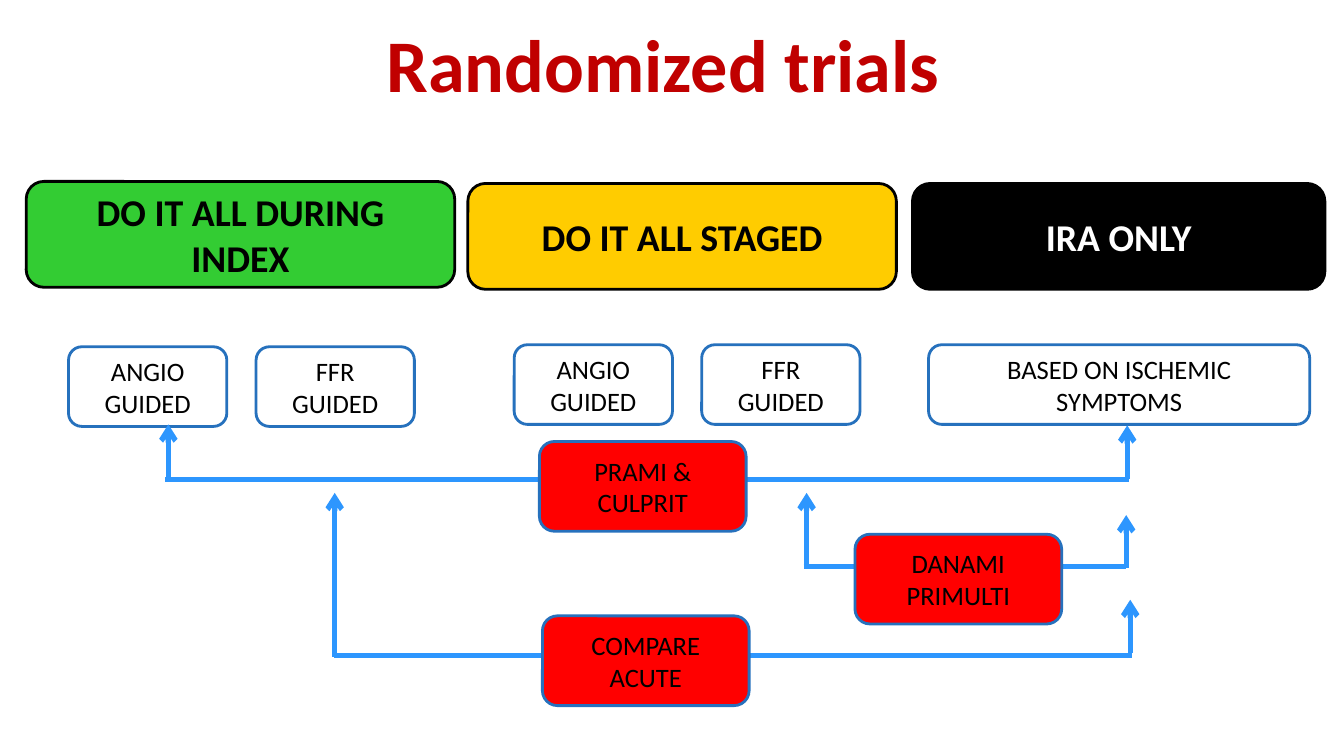
from lxml import etree
from pptx import Presentation
from pptx.dml.color import RGBColor
from pptx.enum import shapes, text
from pptx.oxml import ns
from pptx.util import Inches, Pt

COLORS = {
    "title": "C00000", "index": "33CC33", "staged": "FFCC00", "trial": "FF0000",
    "black": "000000", "white": "FFFFFF", "outline": "2671BD", "arrow": "2D96FE",
}


def color(name):
    return RGBColor.from_string(COLORS[name])


def write(box, lines, size, ink, bold=False):
    frame = box.text_frame
    frame.word_wrap = True
    frame.vertical_anchor = text.MSO_ANCHOR.MIDDLE
    frame.margin_left = frame.margin_right = Inches(0.13)
    frame.margin_top = frame.margin_bottom = Inches(0.07)
    for number, line in enumerate(lines):
        para = frame.add_paragraph() if number else frame.paragraphs[0]
        para.alignment = text.PP_ALIGN.CENTER
        span = para.add_run()
        span.text = line
        span.font.name = "Calibri"
        span.font.size = Pt(size)
        span.font.bold = bold
        span.font.color.rgb = color(ink)


def add_title(page, title):
    box = page.shapes.add_textbox(Inches(0.58), 0, Inches(12), Inches(1.25))
    write(box, [title], 53, "title", bold=True)


def add_box(page, left, top, width, height, fill=None, outline="outline"):
    box = page.shapes.add_shape(
        shapes.MSO_SHAPE.ROUNDED_RECTANGLE,
        Inches(left), Inches(top), Inches(width), Inches(height))
    box.shadow.inherit = False
    if fill:
        box.fill.solid()
        box.fill.fore_color.rgb = color(fill)
    else:
        box.fill.background()
    box.line.color.rgb = color(outline)
    box.line.width = Pt(2)
    return box


def add_strategy(page, left, top, width, label, fill, ink):
    box = add_box(page, left, top, width, 1.05, fill, "black")
    write(box, [label], 27, ink, bold=True)


def add_guidance(page, left, top, width, lines):
    write(add_box(page, left, top, width, 0.79), lines, 19, "black")


def add_trial(page, left, top, lines):
    write(add_box(page, left, top, 2.05, 0.89, "trial"), lines, 19, "black")


def add_line(page, x1, y1, x2, y2, arrow=False):
    line = page.shapes.add_connector(
        shapes.MSO_CONNECTOR.STRAIGHT,
        Inches(x1), Inches(y1), Inches(x2), Inches(y2))
    line.line.color.rgb = color("arrow")
    line.line.width = Pt(3.75)
    if arrow:
        etree.SubElement(line.line._get_or_add_ln(), ns.qn("a:tailEnd"), type="arrow")
    etree.SubElement(line._element.spPr, ns.qn("a:effectLst"))


def add_bracket(page, left, right, level, left_arrow, right_arrow):
    add_line(page, left, level, right, level)
    for x, start, tip in (left_arrow, right_arrow):
        add_line(page, x, start, x, tip, arrow=True)


def main():
    deck = Presentation()
    deck.slide_width = Inches(13.33)
    deck.slide_height = Inches(7.5)
    page = deck.slides.add_slide(deck.slide_layouts[6])

    add_title(page, "Randomized trials")
    add_strategy(page, 0.26, 1.8, 4.25, "DO IT ALL DURING INDEX", "index", "black")
    add_strategy(page, 4.64, 1.82, 4.25, "DO IT ALL STAGED", "staged", "black")
    add_strategy(page, 9.05, 1.82, 4.09, "IRA ONLY", "black", "white")

    for left, top in ((0.68, 3.44), (5.1, 3.42)):
        for column, method in enumerate(("ANGIO", "FFR")):
            add_guidance(page, left + column * 1.86, top, 1.57, [method, "GUIDED"])
    add_guidance(page, 9.21, 3.42, 3.78, ["BASED ON ISCHEMIC SYMPTOMS"])

    add_bracket(page, 1.64, 11.2, 4.76, (1.67, 4.73, 4.21), (11.18, 4.75, 4.22))
    add_trial(page, 5.35, 4.38, ["PRAMI & CULPRIT"])
    add_bracket(page, 7.97, 11.17, 5.62, (8, 5.63, 4.89), (11.17, 5.64, 5.11))
    add_trial(page, 8.48, 5.3, ["DANAMI", "PRIMULTI"])
    add_bracket(page, 3.31, 11.23, 6.5, (3.32, 6.52, 4.89), (11.21, 6.48, 5.95))
    add_trial(page, 5.38, 6.11, ["COMPARE", "ACUTE"])

    deck.save("out.pptx")


if __name__ == "__main__":
    main()
